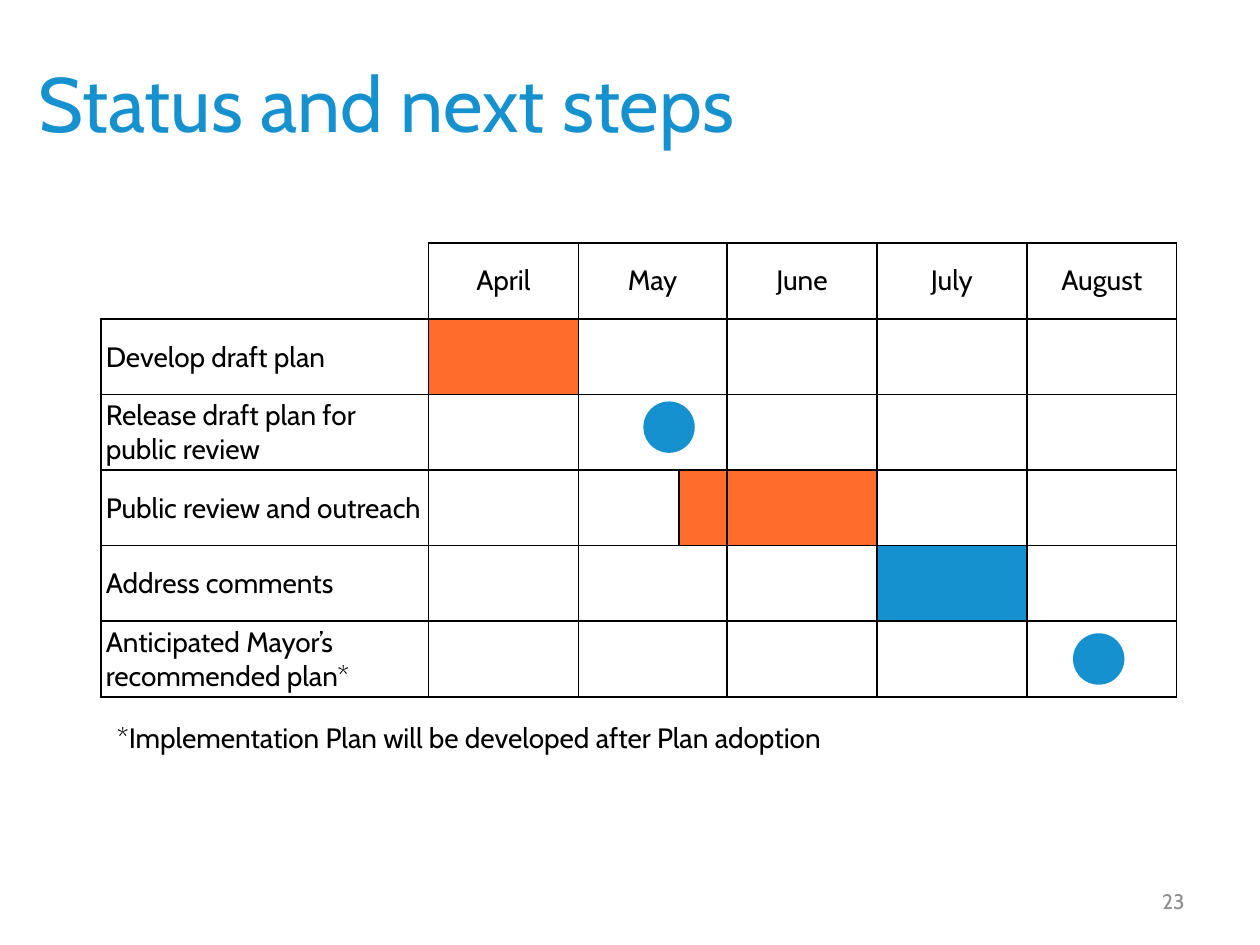
"""Build the status and next steps slide with its schedule table."""
from lxml import etree
from pptx import Presentation
from pptx.dml.color import RGBColor
from pptx.enum.shapes import MSO_SHAPE
from pptx.enum.text import MSO_ANCHOR, PP_ALIGN
from pptx.oxml.ns import qn
from pptx.util import Inches, Pt

BLUE = RGBColor(0x16, 0x91, 0xD0)
ORANGE = RGBColor(0xFF, 0x6C, 0x2C)
BLACK = RGBColor(0, 0, 0)
WHITE = RGBColor(0xFF, 0xFF, 0xFF)
GRAY = RGBColor(0x8C, 0x8C, 0x8C)
LEFT, CENTER, RIGHT = PP_ALIGN.LEFT, PP_ALIGN.CENTER, PP_ALIGN.RIGHT
TOP, MIDDLE = MSO_ANCHOR.TOP, MSO_ANCHOR.MIDDLE
OVAL = MSO_SHAPE.OVAL

TABLE_LEFT, TABLE_TOP = Inches(0.8), Inches(1.93)
MONTH, ROW = Inches(1.19), Inches(0.6)
COLUMNS = [Inches(2.6), MONTH, Inches(0.8), Inches(0.38), MONTH, MONTH, MONTH]
MONTHS = {1: "April", 2: "May", 4: "June", 5: "July", 6: "August"}
TASKS = [
    "Develop draft plan",
    "Release draft plan for public review",
    "Public review and outreach",
    "Address comments",
    "Anticipated Mayor’s recommended plan*",
]
BARS = {(1, 1): ORANGE, (3, 3): ORANGE, (3, 4): ORANGE, (4, 5): BLUE}
SPLIT_ROW = 3
DOT = Inches(0.38)
MILESTONES = [(5.12, 3.2), (8.53, 5.04)]
LABELS = [
    ("Status and next steps", (0.21, 0.18, 9, 1.25), 44, BLUE, LEFT, MIDDLE, True),
    ("23", (7.17, 6.95, 2.33, 0.4), 12, GRAY, RIGHT, MIDDLE, True),
    ("*Implementation Plan will be developed after Plan adoption",
     (0.83, 5.67, 6.1, 0.37), 16, BLACK, LEFT, TOP, False),
]


def write(frame, text, size, color, align):
    frame.text = text
    para = frame.paragraphs[0]
    para.alignment = align
    font = para.runs[0].font
    font.name, font.size = "Cabin", Pt(size)
    font.color.rgb = color


def add_border(cell, side, color):
    props = cell._tc.get_or_add_tcPr()
    line = etree.SubElement(props, qn(f"a:ln{side}"), w=str(Pt(1)))
    fill = etree.SubElement(line, qn("a:solidFill"))
    etree.SubElement(fill, qn("a:srgbClr"), val=str(color))


deck = Presentation()
deck.slide_width, deck.slide_height = Inches(10), Inches(7.5)
page = deck.slides.add_slide(deck.slide_layouts[6])

for text, place, size, color, align, anchor, wrap in LABELS:
    box = page.shapes.add_textbox(*map(Inches, place))
    box.text_frame.word_wrap = wrap
    box.text_frame.vertical_anchor = anchor
    write(box.text_frame, text, size, color, align)

row_count = len(TASKS) + 1
schedule = page.shapes.add_table(
    row_count, len(COLUMNS), TABLE_LEFT, TABLE_TOP, sum(COLUMNS), ROW * row_count
).table
schedule.first_row = schedule.horz_banding = False
for column, width in zip(schedule.columns, COLUMNS):
    column.width = width

for row in range(row_count):
    schedule.rows[row].height = ROW
    for col in range(len(COLUMNS)):
        cell = schedule.cell(row, col)
        cell.vertical_anchor = MIDDLE
        for side in "LRTB":
            corner = (row, col) == (0, 0) and side in "LT"
            add_border(cell, side, WHITE if corner else BLACK)
        cell.fill.solid()
        cell.fill.fore_color.rgb = BARS.get((row, col), WHITE)
    if row != SPLIT_ROW:
        schedule.cell(row, 2).merge(schedule.cell(row, 3))

for col, month in MONTHS.items():
    write(schedule.cell(0, col).text_frame, month, 16, BLACK, CENTER)

for row, task in enumerate(TASKS, start=1):
    cell = schedule.cell(row, 0)
    cell.margin_left, cell.margin_right = Inches(0.04), Inches(0.01)
    cell.margin_top, cell.margin_bottom = Inches(0.01), 0
    write(cell.text_frame, task, 16, BLACK, LEFT)

for left, top in MILESTONES:
    dot = page.shapes.add_shape(OVAL, Inches(left), Inches(top), DOT, DOT)
    dot.shadow.inherit = False
    dot.fill.solid()
    dot.fill.fore_color.rgb = BLUE
    dot.line.color.rgb = BLUE
    dot.line.width = Pt(2)

deck.save("out.pptx")
